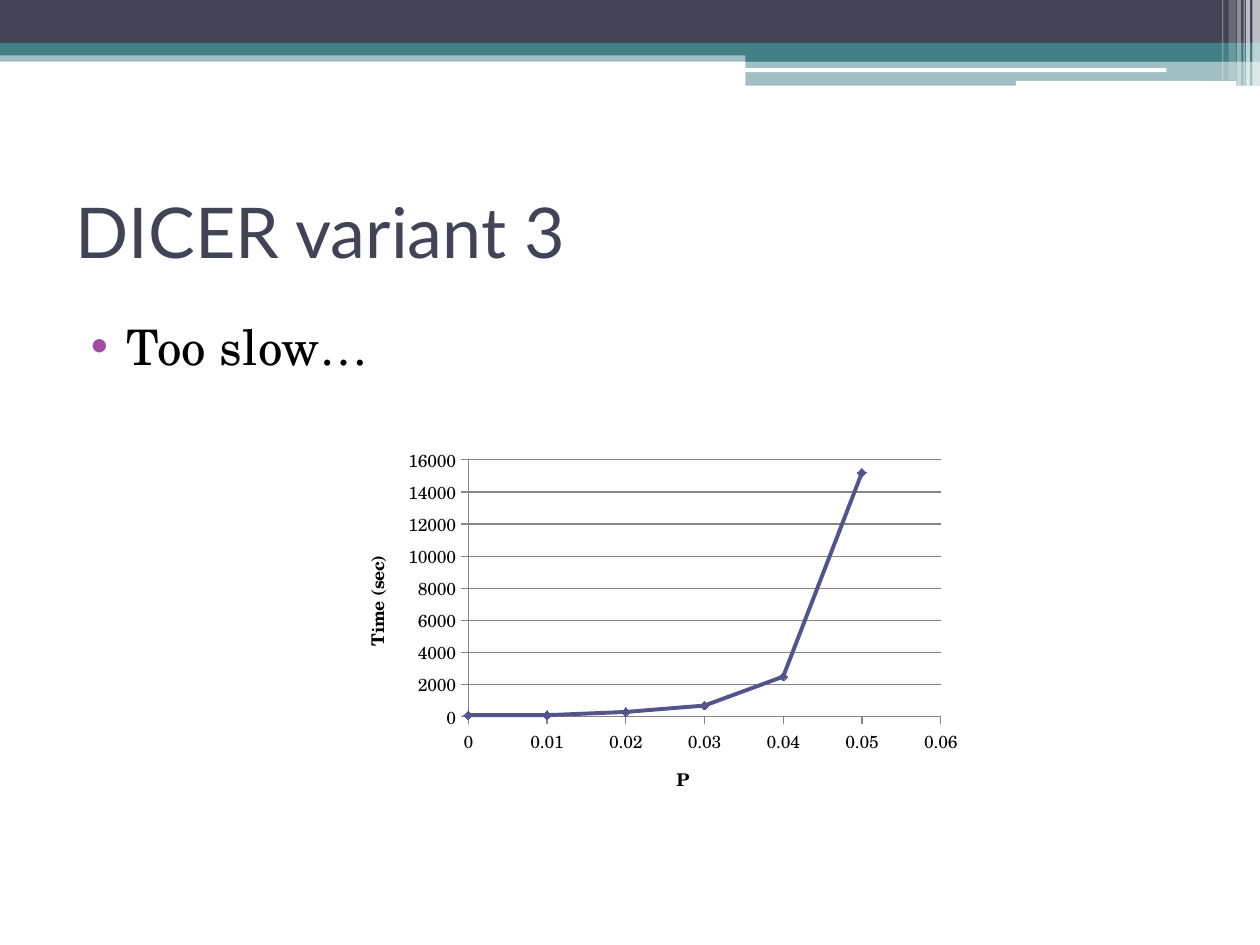
from lxml.etree import SubElement
from pptx import Presentation
from pptx.chart.data import XyChartData
from pptx.dml.color import RGBColor
from pptx.enum.chart import XL_CHART_TYPE, XL_MARKER_STYLE, XL_TICK_MARK
from pptx.enum.shapes import MSO_SHAPE
from pptx.enum.text import MSO_ANCHOR, MSO_AUTO_SIZE, PP_ALIGN
from pptx.oxml.ns import qn
from pptx.util import Pt

WIDTH, HEIGHT = 720, 540
DARK, TEAL, WHITE = "424456", "438086", "FFFFFF"
BLACK, BULLET, CURVE, GRID = "000000", "A04DA3", "53548A", "868686"
HEAD_FONT, BODY_FONT = "Lato", "TeX Gyre Schola"

BANNER = [
    (0, 28.8, WIDTH, 6.5, TEAL, 50),
    (0, 0, WIDTH, 24.5, DARK, 100),
    (0, 24.5, WIDTH, 7.2, TEAL, 100),
    (426, 28, 294, 7.2, TEAL, 100),
    (426, 35, 294, 14, TEAL, 50),
]
RULES = [(425.5, 39, 241, 2.2), (580.5, 46.3, 126, 2.8)]
STRIPES = [
    (715.6, 4.4, 49, 65),
    (712, 2.2, 49, 65),
    (710.6, 0.7, 49, 60),
    (707, 2.2, 49, 40),
    (702, 4.4, 46, 20),
    (698.4, 0.7, 46, 30),
]
TIMES = [100, 100, 300, 700, 2500, 15200]


def rgb(value):
    return RGBColor.from_string(value)


def write(tf, text, size, font, color=BLACK, bold=False, align=None):
    p = tf.paragraphs[0]
    p.alignment = align
    r = p.add_run()
    r.text = text
    r.font.size, r.font.name, r.font.bold = Pt(size), font, bold
    r.font.color.rgb = rgb(color)
    return p


class SlideBuilder:
    def __init__(self, slide):
        self.s = slide

    def bar(self, x, y, w, h, color, opacity=100, kind=MSO_SHAPE.RECTANGLE):
        sp = self.s.shapes.add_shape(kind, Pt(x), Pt(y), Pt(w), Pt(h))
        sp.shadow.inherit = False
        sp.line.fill.background()
        sp.fill.solid()
        sp.fill.fore_color.rgb = rgb(color)
        if opacity < 100:
            clr = sp.fill._xPr.find(".//" + qn("a:srgbClr"))
            SubElement(clr, qn("a:alpha"), val=str(opacity * 1000))
        return sp

    def place(self, sp, x, y, w, h, anchor):
        sp.left, sp.top, sp.width, sp.height = Pt(x), Pt(y), Pt(w), Pt(h)
        tf = sp.text_frame
        tf.word_wrap = True
        tf.auto_size = MSO_AUTO_SIZE.NONE
        tf.vertical_anchor = anchor
        return tf

    def title(self, text):
        tf = self.place(self.s.shapes.title, 36, 90, 648, 84, MSO_ANCHOR.MIDDLE)
        write(tf, text, 40, HEAD_FONT, DARK, align=PP_ALIGN.LEFT)

    def bullet(self, text):
        tf = self.place(self.s.placeholders[1], 36, 177, 648, 340, MSO_ANCHOR.TOP)
        p = write(tf, text, 28, BODY_FONT, align=PP_ALIGN.LEFT)
        p.space_before = Pt(3)
        pPr = p._p.get_or_add_pPr()
        pPr.set("marL", str(Pt(28.8)))
        pPr.set("indent", str(Pt(-20)))
        SubElement(SubElement(pPr, qn("a:buClr")), qn("a:srgbClr"), val=BULLET)
        SubElement(pPr, qn("a:buFont"), typeface="Arial")
        SubElement(pPr, qn("a:buChar"), char="•")

    def axis(self, axis, title, top, step, number_format):
        axis.minimum_scale, axis.maximum_scale, axis.major_unit = 0, top, step
        axis.major_tick_mark = XL_TICK_MARK.OUTSIDE
        axis.minor_tick_mark = XL_TICK_MARK.NONE
        axis.tick_labels.number_format = number_format
        axis.tick_labels.number_format_is_linked = False
        axis.format.line.color.rgb = rgb(GRID)
        axis.format.line.width = Pt(0.75)
        write(axis.axis_title.text_frame, title, 10, BODY_FONT, bold=True)

    def plot_frame(self, chart, **fractions):
        area = chart._chartSpace.chart.plotArea
        layout = area.find(qn("c:layout"))
        if layout is None:
            layout = SubElement(area, qn("c:layout"))
            area.insert(0, layout)
        manual = SubElement(layout, qn("c:manualLayout"))
        SubElement(manual, qn("c:layoutTarget"), val="inner")
        for mode in ("xMode", "yMode"):
            SubElement(manual, qn("c:" + mode), val="edge")
        for name, value in fractions.items():
            SubElement(manual, qn("c:" + name), val=str(value))

    def curve(self, x, y, w, h):
        data = XyChartData()
        series = data.add_series("Series 1")
        for i, time in enumerate(TIMES):
            series.add_data_point(i / 100, time)
        chart = self.s.shapes.add_chart(
            XL_CHART_TYPE.XY_SCATTER_SMOOTH, Pt(x), Pt(y), Pt(w), Pt(h), data
        ).chart
        chart.has_legend = chart.has_title = False
        chart.font.size, chart.font.name = Pt(10), BODY_FONT
        chart.font.color.rgb = rgb(BLACK)
        chart.plots[0].vary_by_categories = False
        self.axis(chart.category_axis, "P", 0.06, 0.01, "General")
        self.axis(chart.value_axis, "Time (sec)", 16000, 2000, "General")
        chart.category_axis.has_major_gridlines = False
        chart.value_axis.has_major_gridlines = True
        grid = chart.value_axis.major_gridlines.format.line
        grid.color.rgb, grid.width = rgb(GRID), Pt(0.75)
        ser = chart.plots[0].series[0]
        ser.format.line.color.rgb, ser.format.line.width = rgb(CURVE), Pt(2.25)
        ser.marker.style, ser.marker.size = XL_MARKER_STYLE.DIAMOND, 5
        ser.marker.format.fill.solid()
        ser.marker.format.fill.fore_color.rgb = rgb(CURVE)
        ser.marker.format.line.color.rgb = rgb(CURVE)
        self.plot_frame(chart, x=0.21, y=0.05, w=0.75, h=0.68)


def main():
    prs = Presentation()
    prs.slide_width, prs.slide_height = Pt(WIDTH), Pt(HEIGHT)
    s = SlideBuilder(prs.slides.add_slide(prs.slide_layouts[1]))
    for band in BANNER:
        s.bar(*band)
    for rule in RULES:
        s.bar(*rule, WHITE, kind=MSO_SHAPE.ROUNDED_RECTANGLE)
    for x, w, h, opacity in STRIPES:
        s.bar(x, 0, w, h, WHITE, opacity)
    s.title("DICER variant 3")
    s.bullet("Too slow…")
    s.curve(192, 252, 360, 216)
    prs.save("out.pptx")


if __name__ == "__main__":
    main()
